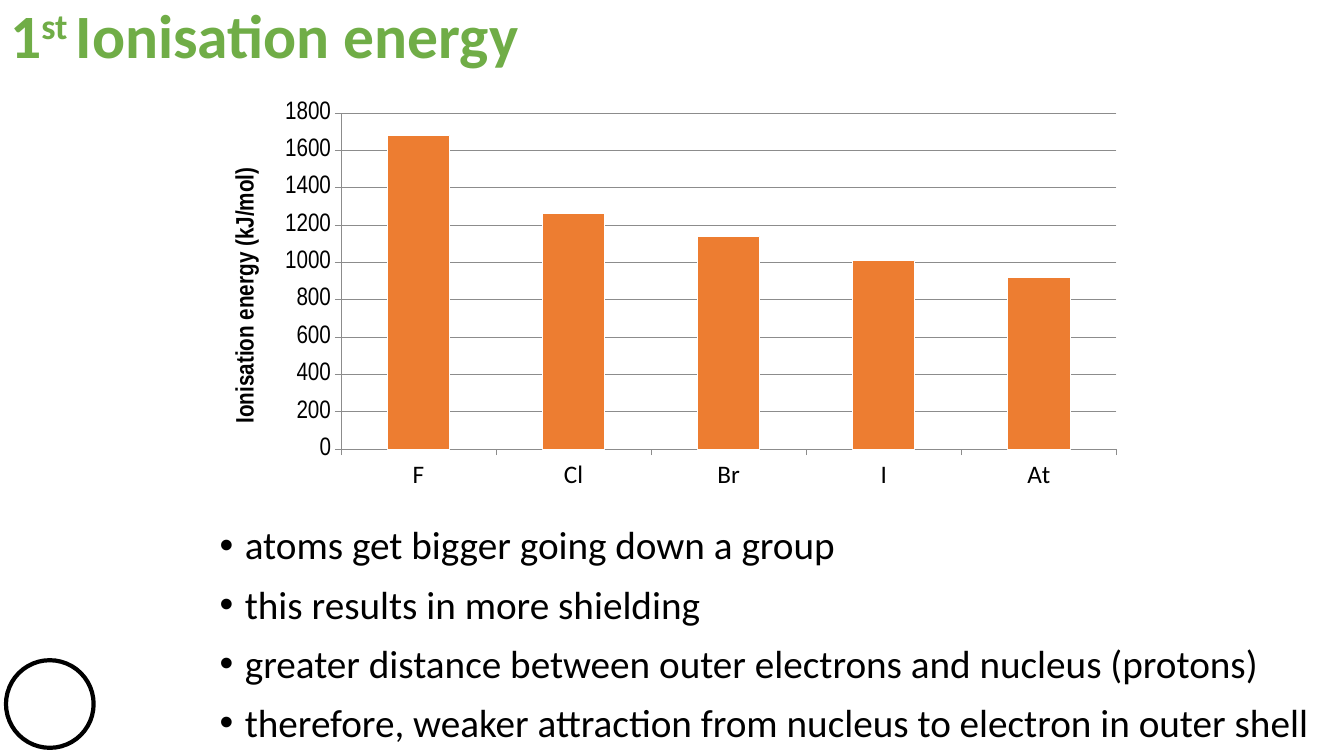
from lxml.etree import SubElement as Sub
from pptx import Presentation as Deck
from pptx.chart.data import CategoryChartData as Data
from pptx.dml.color import RGBColor as RGB
from pptx.enum.chart import XL_CHART_TYPE as Kind, XL_TICK_MARK as Tick
from pptx.enum.shapes import MSO_SHAPE as Shape
from pptx.enum.text import MSO_ANCHOR as Anchor, MSO_AUTO_SIZE as Fit, PP_ALIGN as Align
from pptx.oxml.ns import qn
from pptx.util import Pt

HUES = {"ink": "000000", "paper": "FFFFFF", "head": "70AD47", "bar": "ED7D31", "rule": "8C8C8C"}
FACE, SLIM = "Calibri", "Arial Narrow"


class Page:
    def __init__(self, deck):
        self.slide = deck.slides.add_slide(deck.slide_layouts[5])

    def hue(self, name):
        return RGB.from_string(HUES[name])

    def style(self, font, size, hue="ink", face=FACE, bold=False):
        font.size, font.name, font.bold = Pt(size), face, bold
        font.color.rgb = self.hue(hue)

    def stroke(self, line, hue, width):
        line.color.rgb = self.hue(hue)
        line.width = Pt(width)

    def frame(self, shape):
        frame = shape.text_frame
        frame.word_wrap, frame.auto_size = True, Fit.NONE
        frame.vertical_anchor = Anchor.TOP
        return frame

    def title(self, box, runs):
        head = self.slide.shapes.title
        head.left, head.top, head.width, head.height = map(Pt, box)
        para = self.frame(head).paragraphs[0]
        para.alignment, para.line_spacing = Align.LEFT, 0.9
        for text, base in runs:
            run = para.add_run()
            run.text = text
            self.style(run.font, 44, "head", bold=True)
            if base:
                run._r.get_or_add_rPr().set("baseline", str(base * 1000))

    def list(self, box, lines):
        frame = self.frame(self.slide.shapes.add_textbox(*map(Pt, box)))
        for i, line in enumerate(lines):
            para = frame.add_paragraph() if i else frame.paragraphs[0]
            props = para._p.get_or_add_pPr()
            props.set("marL", str(Pt(18)))
            props.set("indent", str(-Pt(18)))
            Sub(props, qn("a:buFont")).set("typeface", "Arial")
            Sub(props, qn("a:buChar")).set("char", "•")
            para.line_spacing, para.space_after = 0.9, Pt(12)
            run = para.add_run()
            run.text = line
            self.style(run.font, 28)

    def ring(self, box, width):
        ring = self.slide.shapes.add_shape(Shape.OVAL, *map(Pt, box))
        ring.shadow.inherit = False
        ring.fill.solid()
        ring.fill.fore_color.rgb = self.hue("paper")
        self.stroke(ring.line, "ink", width)

    def axis(self, axis, face):
        axis.major_tick_mark, axis.minor_tick_mark = Tick.OUTSIDE, Tick.NONE
        self.style(axis.tick_labels.font, 18, face=face)
        self.stroke(axis.format.line, "rule", 0.5)

    def chart(self, box, label, cats, vals, inner):
        data = Data()
        data.categories = cats
        data.add_series("Series 1", vals)
        chart = self.slide.shapes.add_chart(Kind.COLUMN_CLUSTERED, *map(Pt, box), data).chart
        self.style(chart.font, 18)
        chart.has_legend = chart.has_title = False
        plot = chart.plots[0]
        plot.gap_width, plot.vary_by_categories = 150, False
        bars = plot.series[0].format
        bars.fill.solid()
        bars.fill.fore_color.rgb = self.hue("bar")
        self.stroke(bars.line, "paper", 0.5)
        self.axis(chart.category_axis, FACE)
        axis = chart.value_axis
        self.axis(axis, SLIM)
        axis.minimum_scale, axis.maximum_scale, axis.major_unit = 0, 1800, 200
        self.stroke(axis.major_gridlines.format.line, "rule", 0.5)
        run = axis.axis_title.text_frame.paragraphs[0].add_run()
        run.text = label
        self.style(run.font, 18, face=SLIM, bold=True)
        area = chart._chartSpace.chart.plotArea
        space = area.find(qn("c:layout"))
        if space is None:
            space = Sub(area, qn("c:layout"))
            area.insert(0, space)
        spot = Sub(space, qn("c:manualLayout"))
        pairs = [("layoutTarget", "inner"), ("xMode", "edge"), ("yMode", "edge"), *zip("xywh", inner)]
        for tag, val in pairs:
            Sub(spot, qn(f"c:{tag}")).set("val", str(val))


def main():
    deck = Deck()
    deck.slide_width, deck.slide_height = Pt(960), Pt(540)
    page = Page(deck)
    page.ring((4.3, 471.6, 62.6, 62.6), 3)
    page.list((149.8, 372.2, 797.8, 257), [
        "atoms get bigger going down a group",
        "this results in more shielding",
        "greater distance between outer electrons and nucleus (protons)",
        "therefore, weaker attraction from nucleus to electron in outer shell",
    ])
    page.chart((151.2, 66.2, 659.5, 289.4), "Ionisation energy (kJ/mol)",
               ["F", "Cl", "Br", "I", "At"], [1680, 1260, 1140, 1010, 920],
               (0.14, 0.05, 0.84, 0.83))
    page.title((0, 0, 894.2, 104.4), [("1", 0), ("st ", 30), ("Ionisation energy", 0)])
    deck.save("out.pptx")


if __name__ == "__main__":
    main()
